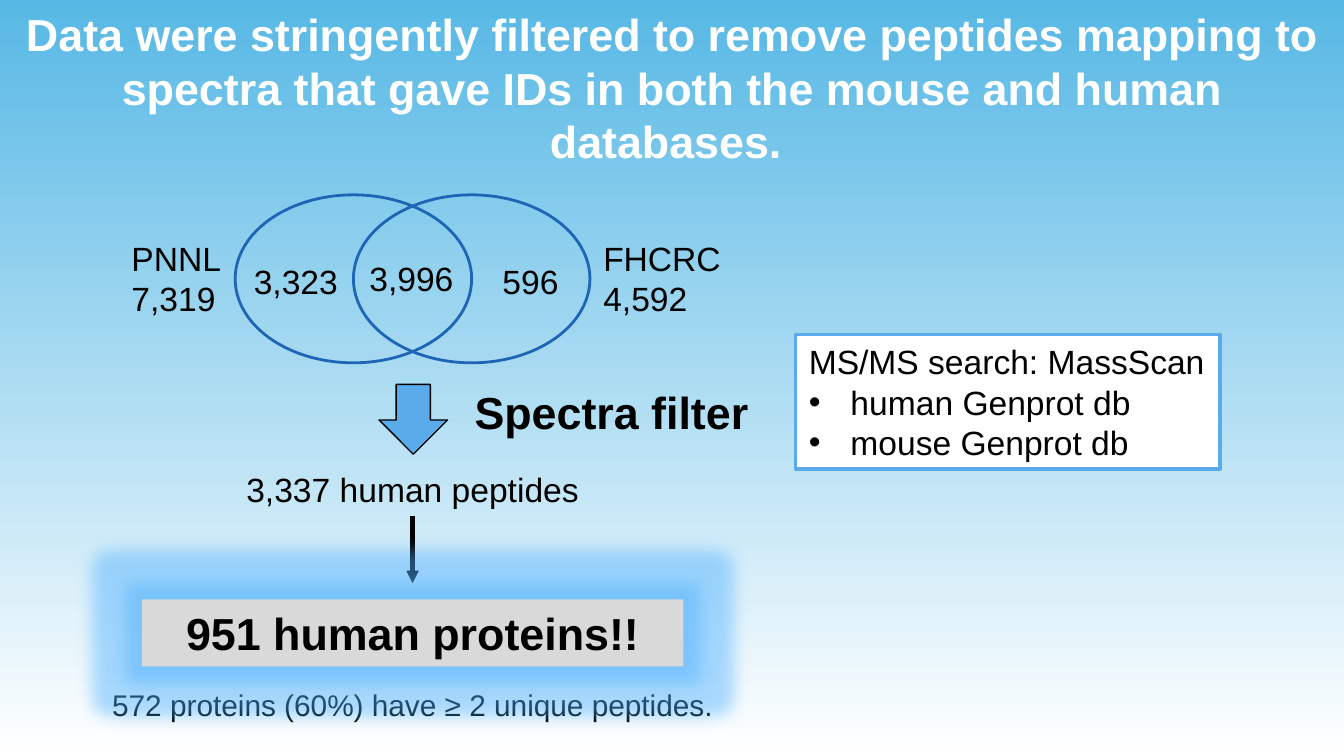
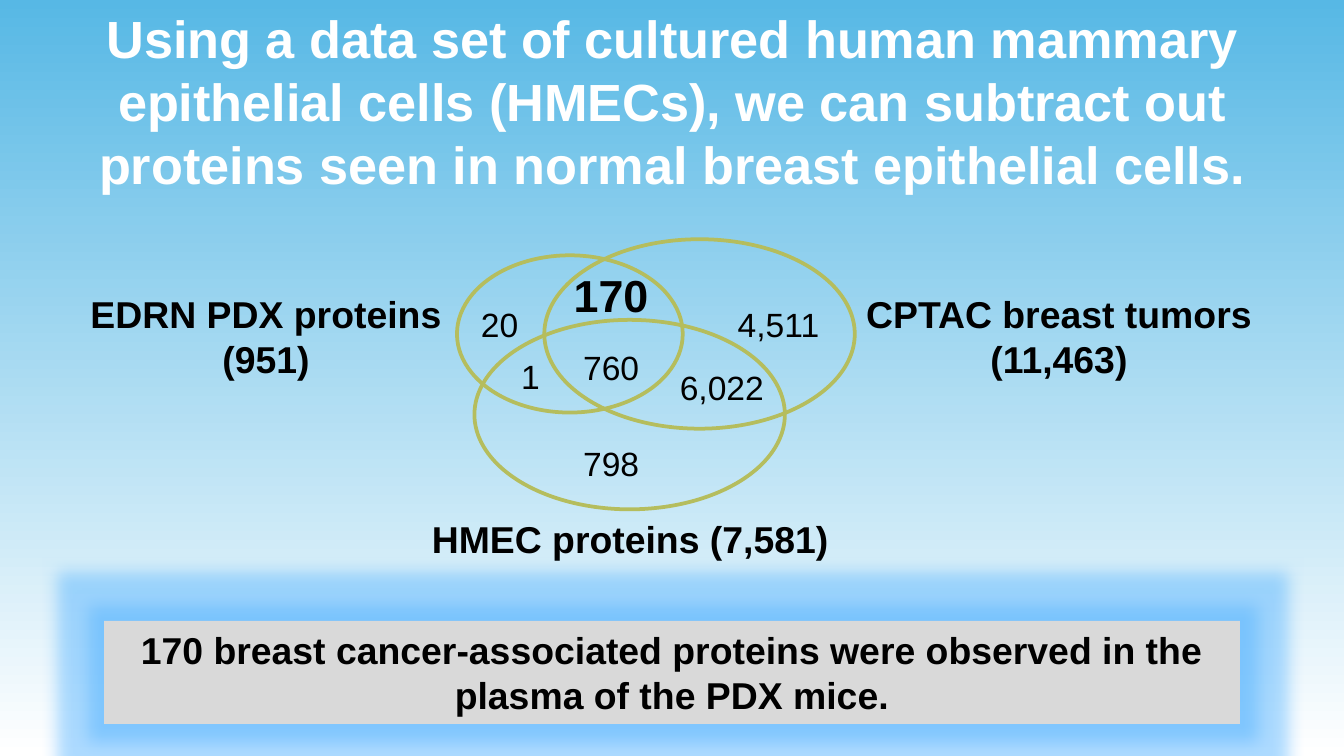
import pptx
import pptx.util
import pptx.dml.color
import pptx.enum.shapes
import pptx.enum.text
import pptx.oxml
import pptx.oxml.ns
from lxml import etree

Inches = pptx.util.Inches
Pt = pptx.util.Pt
RGBColor = pptx.dml.color.RGBColor
Shape = pptx.enum.shapes.MSO_SHAPE
Align = pptx.enum.text.PP_ALIGN
qn = pptx.oxml.ns.qn

WIDTH = 10
HEIGHT = WIDTH * 9 / 16
FONT = "Arial"
SKY = RGBColor(0x57, 0xB8, 0xE5)
WHITE = RGBColor(0xFF, 0xFF, 0xFF)
BLACK = RGBColor(0x00, 0x00, 0x00)
NAVY = RGBColor(0x1E, 0x65, 0xB6)
AZURE = RGBColor(0x5B, 0xAB, 0xEB)
OLIVE = RGBColor(0xB5, 0xBD, 0x5D)
GRAY = RGBColor(0xD9, 0xD9, 0xD9)
GLOW = RGBColor(0x4D, 0xB0, 0xFF)

FILTER_TITLE = ("Data were stringently filtered to remove peptides mapping to spectra "
                "that gave IDs in both the mouse and human databases. ")
AXIS = 3.07
SET_WIDTH, SET_HEIGHT, SET_TOP = 1.76, 1.25, 1.45
FILTER_LABELS = [
    ("PNNL\n7,319", 0.88, 1.72, 0.88),
    ("FHCRC\n4,592", 4.39, 1.72, 1.09),
    ("3,996", 2.65, 1.87, 0.83),
    ("3,323", 1.79, 1.89, 0.83),
    ("596", 3.64, 1.89, 0.62),
]
SEARCH = ["MS/MS search: MassScan", "human Genprot db", "mouse Genprot db"]

SUBTRACT_TITLE = ("Using a data set of cultured human mammary epithelial cells (HMECs), "
                  "we can subtract out proteins seen in normal breast epithelial cells.")
PROTEIN_SETS = [
    (4.05, 1.78, 2.31, 1.41),
    (3.4, 1.9, 1.68, 1.17),
    (3.53, 2.38, 2.31, 1.41),
]
SET_NAMES = [
    ("EDRN PDX proteins\n(951)", 0.56, 2.12, 2.84),
    ("CPTAC breast tumors\n(11,463)", 6.33, 2.12, 3.1),
    ("HMEC proteins (7,581)", 3.1, 3.79, 3.18),
]
COUNTS = [
    ("760", 4.24, 2.53, 0.62),
    ("1", 3.78, 2.6, 0.34),
    ("6,022", 4.96, 2.68, 0.83),
    ("20", 3.48, 2.21, 0.48),
    ("798", 4.24, 3.25, 0.62),
    ("4,511", 5.39, 2.21, 0.81),
]
CONCLUSION = ("170 breast cancer-associated proteins were observed "
              "in the plasma of the PDX mice.")


def text_height(lines, size):
    return lines * size * 1.2 / 72 + 0.1


def write(box, text, size, bold=False, color=BLACK, align=Align.LEFT, wrap=False):
    frame = box.text_frame
    frame.text = text
    frame.word_wrap = wrap
    for para in frame.paragraphs:
        para.alignment = align
        for span in para.runs:
            span.font.name = FONT
            span.font.size = Pt(size)
            span.font.bold = bold
            span.font.color.rgb = color


def label(page, text, left, top, width, size=18, lines=None, **style):
    height = text_height(lines or text.count("\n") + 1, size)
    box = page.shapes.add_textbox(Inches(left), Inches(top), Inches(width), Inches(height))
    write(box, text, size, **style)
    return box


def title(page, text, size):
    label(page, text, 0, 0, WIDTH, size, lines=3, bold=True, color=WHITE,
          align=Align.CENTER, wrap=True)


def draw(page, kind, left, top, width, height, fill=None, line=None, weight=1):
    shape = page.shapes.add_shape(kind, Inches(left), Inches(top), Inches(width), Inches(height))
    shape.shadow.inherit = False
    if fill is None:
        shape.fill.background()
    else:
        shape.fill.solid()
        shape.fill.fore_color.rgb = fill
    if line is None:
        shape.line.fill.background()
    else:
        shape.line.color.rgb = line
        shape.line.width = Pt(weight)
    return shape


def glowing_banner(page, text, top, width, size, lines, center):
    banner = draw(page, Shape.RECTANGLE, center - width / 2, top, width,
                  text_height(lines, size), fill=GRAY)
    write(banner, text, size, bold=True, align=Align.CENTER, wrap=True)
    effects = banner._element.spPr.find(qn("a:effectLst"))
    glow = etree.SubElement(effects, qn("a:glow"), rad=str(Inches(0.25)))
    color = etree.SubElement(glow, qn("a:srgbClr"), val=str(GLOW))
    etree.SubElement(color, qn("a:alpha"), val="45000")


def arrow_below(page, box, bottom):
    middle = box.left + box.width // 2
    arrow = page.shapes.add_connector(pptx.enum.shapes.MSO_CONNECTOR.STRAIGHT,
                                      middle, box.top + box.height, middle, Inches(bottom))
    arrow.begin_connect(box, 2)
    arrow.line.color.rgb = BLACK
    arrow.line.width = Pt(2.25)
    etree.SubElement(arrow.line._get_or_add_ln(), qn("a:tailEnd"), type="triangle")
    etree.SubElement(arrow._element.spPr, qn("a:effectLst"))


def search_panel(page):
    panel = draw(page, Shape.RECTANGLE, 5.92, 2.49, 3.16, text_height(3, 18),
                 fill=WHITE, line=AZURE, weight=2)
    write(panel, "\n".join(SEARCH), 18)
    indent = Inches(0.31)
    for para in panel.text_frame.paragraphs[1:]:
        properties = para._p.get_or_add_pPr()
        properties.set("marL", str(indent))
        properties.set("indent", str(-indent))
        etree.SubElement(properties, qn("a:buFont"), typeface=FONT)
        etree.SubElement(properties, qn("a:buChar"), char="•")


def filter_slide(page):
    for left in (AXIS - SET_WIDTH * 0.75, AXIS - SET_WIDTH * 0.25):
        draw(page, Shape.OVAL, left, SET_TOP, SET_WIDTH, SET_HEIGHT, line=NAVY, weight=1.5)
    for text, left, top, width in FILTER_LABELS:
        label(page, text, left, top, width)
    title(page, FILTER_TITLE, 24)
    peptides = label(page, "3,337 human peptides", AXIS - 1.35, 3.44, 2.7, align=Align.CENTER)
    draw(page, Shape.DOWN_ARROW, AXIS - 0.25, 2.86, 0.51, 0.52, AZURE, BLACK, 0.75)
    label(page, "Spectra filter", 3.42, 2.81, 2.26, 24, bold=True, align=Align.CENTER)
    arrow_below(page, peptides, 4.34)
    search_panel(page)
    label(page, "572 proteins (60%) have ≥ 2 unique peptides.", AXIS - 2.54, 5.06, 5.08, 16,
          align=Align.CENTER, wrap=True)
    glowing_banner(page, "951 human proteins!!", 4.46, 4.03, 24, 1, AXIS)


def subtract_slide(page):
    title(page, SUBTRACT_TITLE, 28)
    for place in PROTEIN_SETS:
        draw(page, Shape.OVAL, *place, line=OLIVE, weight=2)
    for name in SET_NAMES:
        label(page, *name, size=20, bold=True, align=Align.CENTER)
    for count in COUNTS:
        label(page, *count)
    label(page, "170", 4.17, 1.94, 0.76, 24, bold=True)
    glowing_banner(page, CONCLUSION, 4.62, 8.45, 20, 2, WIDTH / 2)


def main():
    deck = pptx.Presentation()
    deck.slide_width = Inches(WIDTH)
    deck.slide_height = Inches(HEIGHT)
    backdrop = deck.slide_master.background.fill
    backdrop.gradient()
    backdrop.gradient_angle = 270
    for stop, color in zip(backdrop.gradient_stops, (SKY, WHITE)):
        stop.color.rgb = color
    for build in (filter_slide, subtract_slide):
        build(deck.slides.add_slide(deck.slide_layouts[6]))
    deck.save("out.pptx")


if __name__ == "__main__":
    main()
